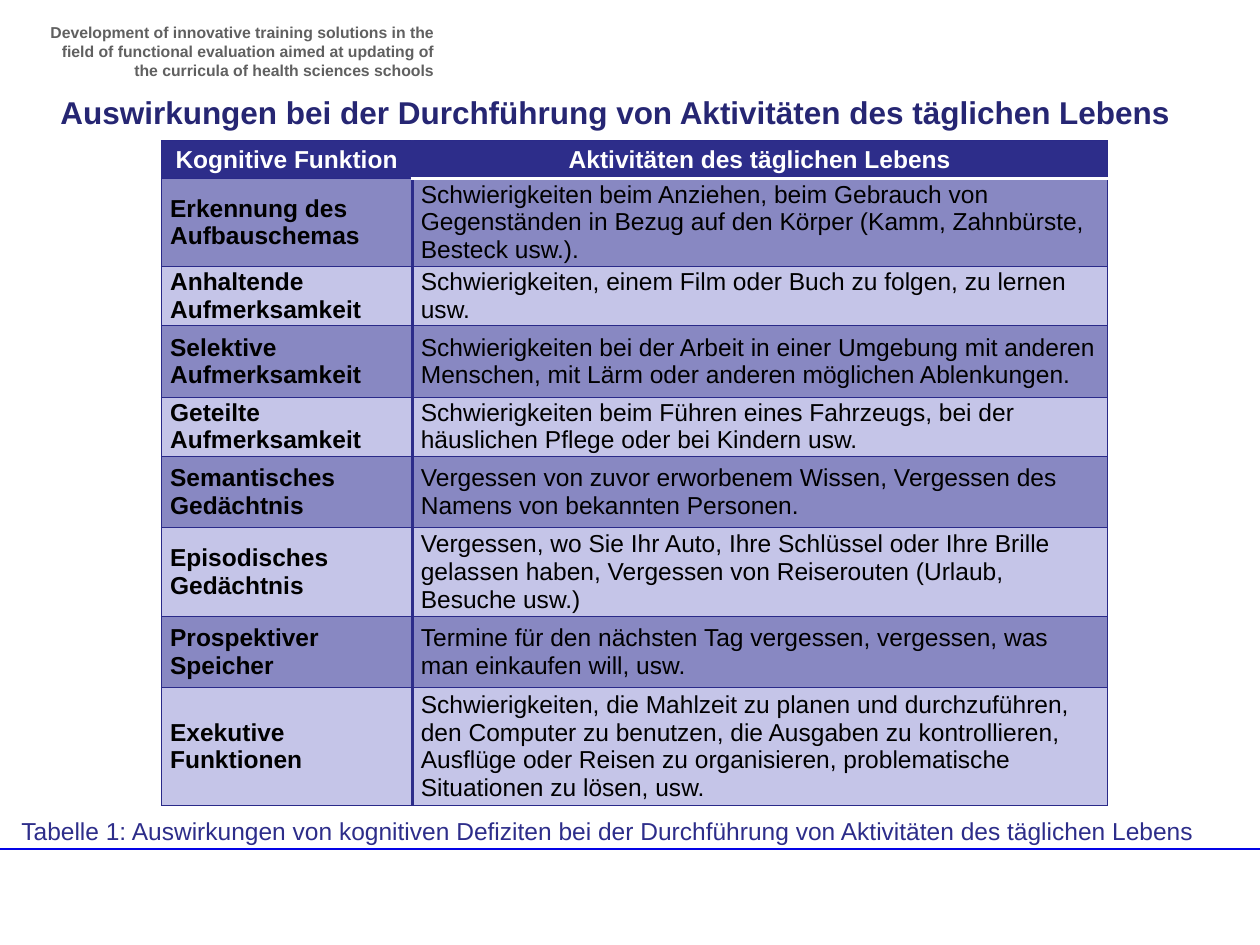
import pptx
import pptx.dml.color
import pptx.enum.shapes
import pptx.enum.text
import pptx.oxml
import pptx.oxml.ns
import pptx.util

Pt = pptx.util.Pt
ALIGN = pptx.enum.text.PP_ALIGN
MIDDLE = pptx.enum.text.MSO_ANCHOR.MIDDLE
NAVY, EDGE, WHITE, BLACK = "2D2D8A", "2A2A89", "FFFFFF", "000000"
BANDS = ["8888C2", "C5C5E8"]
WIDTHS = [143.3, 397.4]
HEIGHTS = [21.5, 46.5, 31.5, 41, 31.5, 41, 47.5, 41, 63]
ROWS = [
    ("Kognitive Funktion", "Aktivitäten des täglichen Lebens"),
    ("Erkennung des Aufbauschemas",
     "Schwierigkeiten beim Anziehen, beim Gebrauch von Gegenständen in Bezug "
     "auf den Körper (Kamm, Zahnbürste, Besteck usw.)."),
    ("Anhaltende Aufmerksamkeit",
     "Schwierigkeiten, einem Film oder Buch zu folgen, zu lernen usw."),
    ("Selektive Aufmerksamkeit",
     "Schwierigkeiten bei der Arbeit in einer Umgebung mit anderen Menschen, "
     "mit Lärm oder anderen möglichen Ablenkungen."),
    ("Geteilte Aufmerksamkeit",
     "Schwierigkeiten beim Führen eines Fahrzeugs, bei der häuslichen Pflege "
     "oder bei Kindern usw."),
    ("Semantisches Gedächtnis",
     "Vergessen von zuvor erworbenem Wissen, Vergessen des Namens von "
     "bekannten Personen."),
    ("Episodisches Gedächtnis",
     "Vergessen, wo Sie Ihr Auto, Ihre Schlüssel oder Ihre Brille gelassen "
     "haben, Vergessen von Reiserouten (Urlaub, Besuche usw.)"),
    ("Prospektiver Speicher",
     "Termine für den nächsten Tag vergessen, vergessen, was man einkaufen "
     "will, usw."),
    ("Exekutive Funktionen",
     "Schwierigkeiten, die Mahlzeit zu planen und durchzuführen, den Computer "
     "zu benutzen, die Ausgaben zu kontrollieren, Ausflüge oder Reisen zu "
     "organisieren, problematische Situationen zu lösen, usw."),
]


def paint(color, value):
    color.rgb = pptx.dml.color.RGBColor.from_string(value)


def write(frame, text, size, color, bold=False, align=ALIGN.LEFT):
    frame.text = text
    frame.word_wrap = True
    par = frame.paragraphs[0]
    par.alignment = align
    font = par.runs[0].font
    font.name, font.size, font.bold = "Arial", Pt(size), bold
    paint(font.color, color)


def add_label(slide, box, *style):
    shape = slide.shapes.add_textbox(*map(Pt, box))
    write(shape.text_frame, *style)


def add_title(slide, box, text):
    title = slide.shapes.title
    title.left, title.top, title.width, title.height = map(Pt, box)
    write(title.text_frame, text, 18, "262673", True, ALIGN.CENTER)
    title.text_frame.vertical_anchor = MIDDLE


def add_rule(slide, left, right, top):
    kind = pptx.enum.shapes.MSO_CONNECTOR.STRAIGHT
    rule = slide.shapes.add_connector(kind, Pt(left), Pt(top), Pt(right), Pt(top))
    rule.line.width = Pt(1)
    paint(rule.line.color, "0404E6")
    props = rule._element.spPr
    props.append(props.makeelement(pptx.oxml.ns.qn("a:effectLst"), {}))


def set_edge(cell, side, color=EDGE, width=0.75):
    """Draw one border; call for L, R, T, B in that order, before the fill."""
    space = pptx.oxml.ns.nsdecls("a")
    cell._tc.get_or_add_tcPr().append(pptx.oxml.parse_xml(
        f'<a:ln{side} {space} w="{Pt(width)}"><a:solidFill>'
        f'<a:srgbClr val="{color}"/></a:solidFill></a:ln{side}>'))


def fill_cell(cell, text, row, col):
    head, first = row == 0, col == 0
    cell.margin_left = cell.margin_right = Pt(5)
    cell.margin_top = cell.margin_bottom = 0
    cell.vertical_anchor = MIDDLE
    write(cell.text_frame, text, 14, WHITE if head else BLACK, head or first,
          ALIGN.CENTER if head else ALIGN.LEFT)
    thick, white = (NAVY, 2), (WHITE, 2)
    edges = {
        "L": () if first else thick,
        "R": thick if first else (),
        "T": white if row == 1 and not first else (),
        "B": white if head and not first else (),
    }
    for side, style in edges.items():
        set_edge(cell, side, *style)
    cell.fill.solid()
    paint(cell.fill.fore_color, NAVY if head else BANDS[(row - 1) % 2])


def add_grid(slide, left, top):
    box = left, top, sum(WIDTHS), sum(HEIGHTS)
    table = slide.shapes.add_table(len(ROWS), len(WIDTHS), *map(Pt, box)).table
    for column, width in zip(table.columns, WIDTHS):
        column.width = Pt(width)
    for row, (texts, height) in enumerate(zip(ROWS, HEIGHTS)):
        table.rows[row].height = Pt(height)
        for col, text in enumerate(texts):
            fill_cell(table.cell(row, col), text, row, col)


def main():
    deck = pptx.Presentation()
    deck.slide_width, deck.slide_height = Pt(720), Pt(540)
    slide = deck.slides.add_slide(deck.slide_layouts[5])
    add_rule(slide, -3.6, 720, 485.3)
    add_label(slide, (20.2, 9.4, 234.7, 33.8),
              "Development of innovative training solutions in the ﬁeld of "
              "functional evaluation aimed at updating of the curricula of "
              "health sciences schools", 9, "606060", True, ALIGN.RIGHT)
    add_grid(slide, 92.2, 80.4)
    add_title(slide, (20.2, 49.5, 663, 29),
              "Auswirkungen bei der Durchführung von Aktivitäten des täglichen Lebens")
    add_label(slide, (0, 463, 694.8, 24.5),
              "Tabelle 1: Auswirkungen von kognitiven Defiziten bei der "
              "Durchführung von Aktivitäten des täglichen Lebens",
              14, NAVY, False, ALIGN.CENTER)
    deck.save("out.pptx")


if __name__ == "__main__":
    main()
